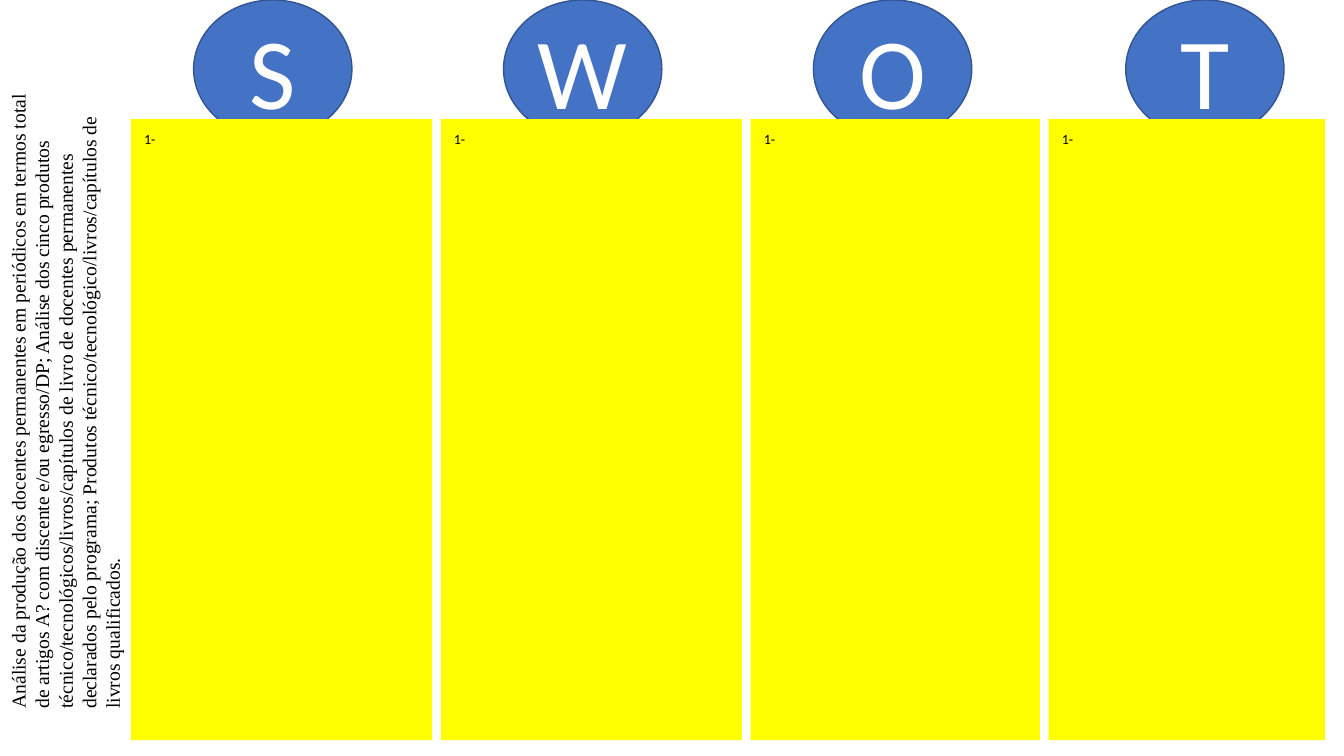
from dataclasses import dataclass

from pptx import Presentation
from pptx.dml.color import RGBColor
from pptx.enum.shapes import MSO_SHAPE
from pptx.enum.text import MSO_ANCHOR, PP_ALIGN
from pptx.slide import Slide
from pptx.text.text import TextFrame
from pptx.util import Cm, Pt

OVAL, RECT = MSO_SHAPE.OVAL, MSO_SHAPE.RECTANGLE
TOP, MIDDLE = MSO_ANCHOR.TOP, MSO_ANCHOR.MIDDLE
LEFT, CENTER = PP_ALIGN.LEFT, PP_ALIGN.CENTER

COLORS = {"blue": "4472C4", "edge": "325491", "yellow": "FFFF00",
          "white": "FFFFFF", "black": "000000"}

START, GAP = 3.3, 0.22
PANEL_TOP, PANEL_HIGH = 3.0, 15.65
OVAL_WIDE, OVAL_HIGH = 3.99, 3.48

TOPIC = (
    "Análise da produção dos docentes permanentes em periódicos em termos total "
    "de artigos A? com discente e/ou egresso/DP; Análise dos cinco produtos "
    "técnico/tecnológicos/livros/capítulos de livro de docentes permanentes "
    "declarados pelo programa; Produtos técnico/tecnológico/livros/capítulos de "
    "livros qualificados."
)


@dataclass
class Column:
    letter: str
    width: float
    shift: float  # oval offset from the panel's left edge


COLUMNS = [
    Column("S", 7.59, 1.58),
    Column("W", 7.59, 1.58),
    Column("O", 7.29, 1.58),
    Column("T", 6.96, 1.94),
]


def color(name: str) -> RGBColor:
    return RGBColor.from_string(COLORS[name])


def write(frame: TextFrame, text: str, size: int, font: str, ink: str,
          align: PP_ALIGN, anchor: MSO_ANCHOR) -> None:
    frame.word_wrap = True
    frame.vertical_anchor = anchor
    para = frame.paragraphs[0]
    para.alignment = align
    run = para.add_run()
    run.text = text
    run.font.size = Pt(size)
    run.font.name = font
    run.font.color.rgb = color(ink)


def add_oval(slide: Slide, left: float, letter: str) -> None:
    oval = slide.shapes.add_shape(OVAL, Cm(left), Cm(0), Cm(OVAL_WIDE), Cm(OVAL_HIGH))
    oval.shadow.inherit = False
    oval.fill.solid()
    oval.fill.fore_color.rgb = color("blue")
    oval.line.color.rgb = color("edge")
    oval.line.width = Pt(1)
    write(oval.text_frame, letter, 72, "Calibri", "white", CENTER, MIDDLE)


def add_panel(slide: Slide, left: float, width: float) -> None:
    panel = slide.shapes.add_shape(RECT, Cm(left), Cm(PANEL_TOP), Cm(width), Cm(PANEL_HIGH))
    panel.shadow.inherit = False
    panel.fill.solid()
    panel.fill.fore_color.rgb = color("yellow")
    panel.line.fill.background()
    frame = panel.text_frame
    frame.margin_left, frame.margin_top = Cm(0.33), Cm(0.28)
    write(frame, "1-", 10, "Calibri", "black", LEFT, TOP)


def add_topic(slide: Slide) -> None:
    box = slide.shapes.add_textbox(Cm(0.03), Cm(1.73), Cm(3.5), Cm(16.38))
    write(box.text_frame, TOPIC, 14, "Times New Roman", "black", LEFT, TOP)
    box.element.txBody.bodyPr.set("vert", "vert270")


def main() -> None:
    deck = Presentation()
    deck.slide_width, deck.slide_height = Cm(33.87), Cm(19.05)
    slide = deck.slides.add_slide(deck.slide_layouts[6])

    # Rotated topic on the left
    add_topic(slide)

    # SWOT columns: each panel covers the foot of its oval
    left = START
    for col in COLUMNS:
        add_oval(slide, left + col.shift, col.letter)
        add_panel(slide, left, col.width)
        left += col.width + GAP

    deck.save("out.pptx")


if __name__ == "__main__":
    main()
